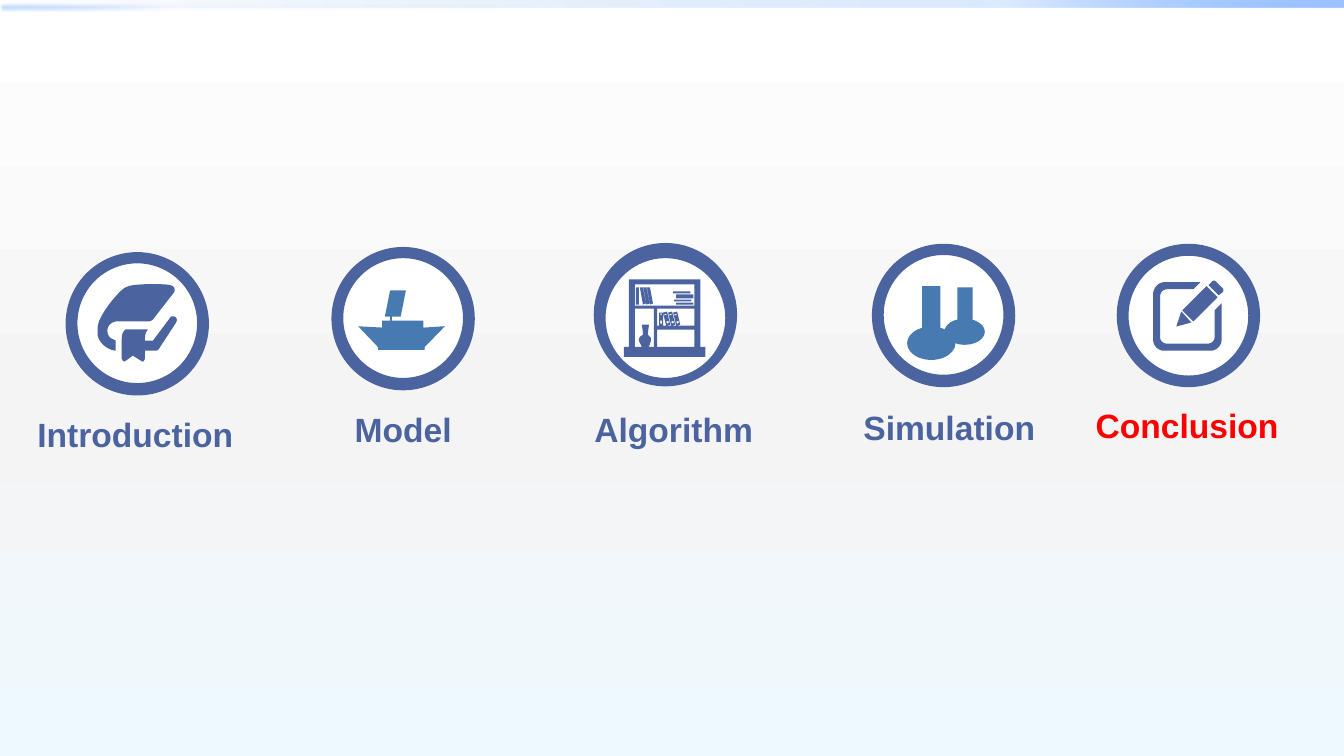
from lxml.etree import SubElement
from pptx import Presentation
from pptx.dml.color import RGBColor
from pptx.enum.shapes import MSO_SHAPE as Preset
from pptx.oxml.ns import qn
from pptx.util import Cm, Pt

NAVY = RGBColor(0x4B, 0x64, 0x9F)
STEEL = RGBColor(0x47, 0x7A, 0xB1)
WHITE = RGBColor(0xFF, 0xFF, 0xFF)
RED = RGBColor(0xFF, 0x00, 0x00)
PALE_GREY = RGBColor(0xF4, 0xF4, 0xF4)
PALE_BLUE = RGBColor(0xEE, 0xF9, 0xFF)
DEEP_BLUE = RGBColor(0x00, 0x58, 0xB7)
MID_BLUE = RGBColor(0x4F, 0x95, 0xFF)
LIGHT_BLUE = RGBColor(0x9E, 0xC2, 0xFF)

SLIDE_WIDTH, SLIDE_HEIGHT = 33.87, 19.05
RING_SIZE, DISC_SIZE, LABEL_HEIGHT = 3.56, 3.07, 1.27
ICON_UNIT = 0.0254
CURVE_STEPS = 8


def box(left, top, right, bottom):
    return [(left, top), (right, top), (right, bottom), (left, bottom)]


def shifted(points, distance):
    return [(x + distance, y) for x, y in points]


# Gradients: position %, colour, opacity %
BACKGROUND = [(0, WHITE, 100), (55, PALE_GREY, 100), (100, PALE_BLUE, 100)]
TOP_BARS = [  # box, stops, clockwise angle, soft edge
    ((0, 0, SLIDE_WIDTH, 0.2),
     [(0, DEEP_BLUE, 0), (75, MID_BLUE, 20), (100, LIGHT_BLUE, 100)], 315, False),
    ((0, 0.1, SLIDE_WIDTH / 2, 0.2),
     [(0, DEEP_BLUE, 0), (75, MID_BLUE, 5), (100, LIGHT_BLUE, 60)], 135, True),
]

# Icon outlines: a pair is a corner, six numbers are a Bézier curve
BOOK = [
    [(73, 32), (75, 32), (77, 32, 80, 34, 78, 38), (61, 64),
     (60, 66, 58, 66, 57, 66), (47, 66), (47, 74), (46, 76), (45, 77), (43, 76),
     (35, 71), (28, 76), (27, 77, 26, 77, 25, 76), (24, 74), (24, 54),
     (24, 49, 26, 46, 28, 45), (50, 45), (47, 48, 47, 53, 47, 56), (55, 56)],
    [(54, 0), (60, 0, 67, 0, 72, 1), (77, 2, 77, 6, 76, 8), (55, 35),
     (54, 36, 52, 37, 51, 37), (19, 37), (16, 37, 8, 40, 10, 49),
     (11, 52, 13, 54, 16, 55), (18, 56), (18, 66), (14, 66, 3, 62, 0, 51),
     (0, 48, 0, 45, 0, 42), (2, 29, 21, 8, 24, 6), (26, 4, 28, 3, 31, 2),
     (33, 1, 43, 0, 54, 0)],
]
PENCIL = [
    [(69, 12), (65, 15), (55, 5), (58, 2), (59, 0, 61, 0, 62, 1), (69, 8),
     (70, 9, 70, 11, 69, 12)],
    [(40, 41), (29, 30), (53, 6), (64, 17)],
    [(38, 42), (23, 46), (28, 31)],
    [(14, 9), (10, 9, 7, 12, 7, 16), (7, 57), (7, 60, 10, 63, 14, 63), (54, 63),
     (58, 63, 61, 60, 61, 57), (61, 30), (68, 23), (68, 59),
     (68, 65, 63, 70, 57, 70), (11, 70), (5, 70, 0, 65, 0, 59), (0, 14),
     (0, 8, 5, 2, 11, 2), (47, 2), (40, 9)],
]
FRAME = [(76, 0), (76, 67), (81, 67), (81, 77), (0, 77), (0, 67), (5, 67), (5, 0)]
VASE = [(18, 45), (19, 53), (19, 55), (16, 57), (15, 59), (15, 61), (18, 67),
        (25, 67), (27, 61), (27, 58), (24, 55), (24, 53), (25, 45)]
SHELF_BOXES = [
    (11, 5, 70, 26), (11, 29, 30, 67), (33, 29, 70, 46), (33, 50, 70, 67),  # bays
    (49, 12, 66, 14), (52, 15, 69, 19), (50, 20, 67, 22), (52, 23, 69, 25),  # stack
    (12, 8, 15, 25),  # upright book
    (35, 33, 39, 46), (36, 34, 38, 35), (36, 41, 38, 44),  # upright binder
]
LEANING_BOOK = [(16, 8), (19, 8), (22, 24), (19, 25)]
LEANING_BINDER = [
    [(39, 33), (43, 32), (46, 45), (42, 46)],
    [(40, 35), (42, 34), (43, 35), (40, 36)],
    [(42, 42), (44, 41), (45, 43), (43, 44)],
]
SHELF = ([FRAME, VASE] + [box(*edges) for edges in SHELF_BOXES]
         + [shifted(LEANING_BOOK, step) for step in (0, 3.5, 7)]
         + [shifted(part, step) for step in (0, 5, 10) for part in LEANING_BINDER])

# Icons made of presets: preset, box, rotation
SHIP = [
    (Preset.RECTANGLE, (9.53, 8.26, 1.17, 0.56), 0),
    (Preset.RIGHT_TRIANGLE, (9.19, 7.87, 0.71, 0.76), 316.3),
    (Preset.RIGHT_TRIANGLE, (10.29, 7.9, 0.79, 0.71), 314.2),
    (Preset.RECTANGLE, (9.63, 8.08, 1.04, 0.38), 0),
    (Preset.RECTANGLE, (9.83, 7.37, 0.05, 1.4), 0),
    (Preset.PARALLELOGRAM, (9.7, 7.32, 0.53, 0.66), 0),
]
COLUMNS = [
    (Preset.OVAL, (23.8, 8.03, 1.02, 0.66), 0),
    (Preset.RECTANGLE, (24.13, 7.24, 0.38, 0.99), 0),
    (Preset.OVAL, (22.86, 8.23, 1.22, 0.84), 0),
    (Preset.RECTANGLE, (23.24, 7.21, 0.46, 1.27), 0),
]

# Label, colour, label left/top/width, ring left/top, disc drop, outline icon, preset icon
SECTIONS = [
    ("Introduction", NAVY, (0.69, 10.31, 5.49), (1.68, 6.38), 0.23,
     (BOOK, 2.46, 7.16), []),
    ("Model", NAVY, (8.69, 10.19, 3), (8.38, 6.25), 0.23, None, SHIP),
    ("Algorithm", NAVY, (14.73, 10.19, 4.55), (14.99, 6.15), 0.33,
     (SHELF, 15.72, 7.04), []),
    ("Simulation", NAVY, (21.51, 10.13, 5.18), (22, 6.17), 0.23, None, COLUMNS),
    ("Conclusion", RED, (27.36, 10.08, 5.16), (28.17, 6.17), 0.25,
     (PENCIL, 29.06, 7.06), []),
]


def set_gradient(fill, element, stops, clockwise):
    fill.gradient()
    fill.gradient_angle = (360 - clockwise) % 360
    stop_list = element.xpath(".//a:gradFill/a:gsLst")[0]
    for old_stop in list(stop_list):
        stop_list.remove(old_stop)
    for position, color, opacity in stops:
        stop = SubElement(stop_list, qn("a:gs"), pos=str(position * 1000))
        tint = SubElement(stop, qn("a:srgbClr"), val=str(color))
        SubElement(tint, qn("a:alpha"), val=str(opacity * 1000))


def add_preset(shapes, preset, bounds, color=None, outline=None, rotation=0):
    shape = shapes.add_shape(preset, *[Cm(length) for length in bounds])
    shape.shadow.inherit = False
    shape.rotation = rotation
    if color is not None:
        shape.fill.solid()
        shape.fill.fore_color.rgb = color
    if outline is None:
        shape.line.fill.background()
    else:
        shape.line.color.rgb = outline
        shape.line.width = Pt(1.5)
    return shape


def flatten(outline):
    points = [outline[0]]
    for segment in outline[1:]:
        if len(segment) == 2:
            points.append(segment)
            continue
        controls = [points[-1], segment[0:2], segment[2:4], segment[4:6]]
        for step in range(1, CURVE_STEPS + 1):
            t = step / CURVE_STEPS
            weights = [(1 - t) ** 3, 3 * t * (1 - t) ** 2, 3 * t * t * (1 - t), t ** 3]
            points.append(tuple(sum(w * c[axis] for w, c in zip(weights, controls))
                                for axis in (0, 1)))
    return points


def add_outline_icon(shapes, outlines, left, top):
    builder = None
    for outline in outlines:
        points = [(Cm(left + x * ICON_UNIT), Cm(top + y * ICON_UNIT))
                  for x, y in flatten(outline)]
        if builder is None:
            builder = shapes.build_freeform(*points[0])
        else:
            builder.move_to(*points[0])
        builder.add_line_segments(points[1:], close=True)
    icon = builder.convert_to_shape()
    icon.shadow.inherit = False
    icon.fill.solid()
    icon.fill.fore_color.rgb = NAVY
    icon.line.fill.background()


presentation = Presentation()
presentation.slide_width, presentation.slide_height = Cm(SLIDE_WIDTH), Cm(SLIDE_HEIGHT)
slide = presentation.slides.add_slide(presentation.slide_layouts[6])

# Background and top bars
background_fill = slide.background.fill
set_gradient(background_fill, slide.element, BACKGROUND, 90)
for bounds, stops, angle, soft in TOP_BARS:
    bar = add_preset(slide.shapes, Preset.RECTANGLE, bounds)
    set_gradient(bar.fill, bar.element, stops, angle)
    if soft:
        effects = bar.element.xpath(".//a:effectLst")[0]
        SubElement(effects, qn("a:softEdge"), rad="12700")

# Sections: ring, disc, icon and label
inset = (RING_SIZE - DISC_SIZE) / 2
for name, color, label_place, (left, top), drop, outline_icon, preset_icon in SECTIONS:
    shapes = slide.shapes.add_group_shape().shapes
    add_preset(shapes, Preset.OVAL, (left, top, RING_SIZE, RING_SIZE), NAVY, NAVY)
    add_preset(shapes, Preset.OVAL, (left + inset, top + drop, DISC_SIZE, DISC_SIZE),
               WHITE, NAVY)
    if outline_icon:
        add_outline_icon(shapes, *outline_icon)
    for preset, bounds, rotation in preset_icon:
        add_preset(shapes, preset, bounds, STEEL, rotation=rotation)
    label = shapes.add_textbox(*[Cm(length) for length in (*label_place, LABEL_HEIGHT)])
    label.text_frame.word_wrap = True
    paragraph = label.text_frame.paragraphs[0]
    paragraph.text = name
    paragraph.font.name, paragraph.font.size = "Arial", Pt(24)
    paragraph.font.bold = True
    paragraph.font.color.rgb = color

presentation.save("out.pptx")
